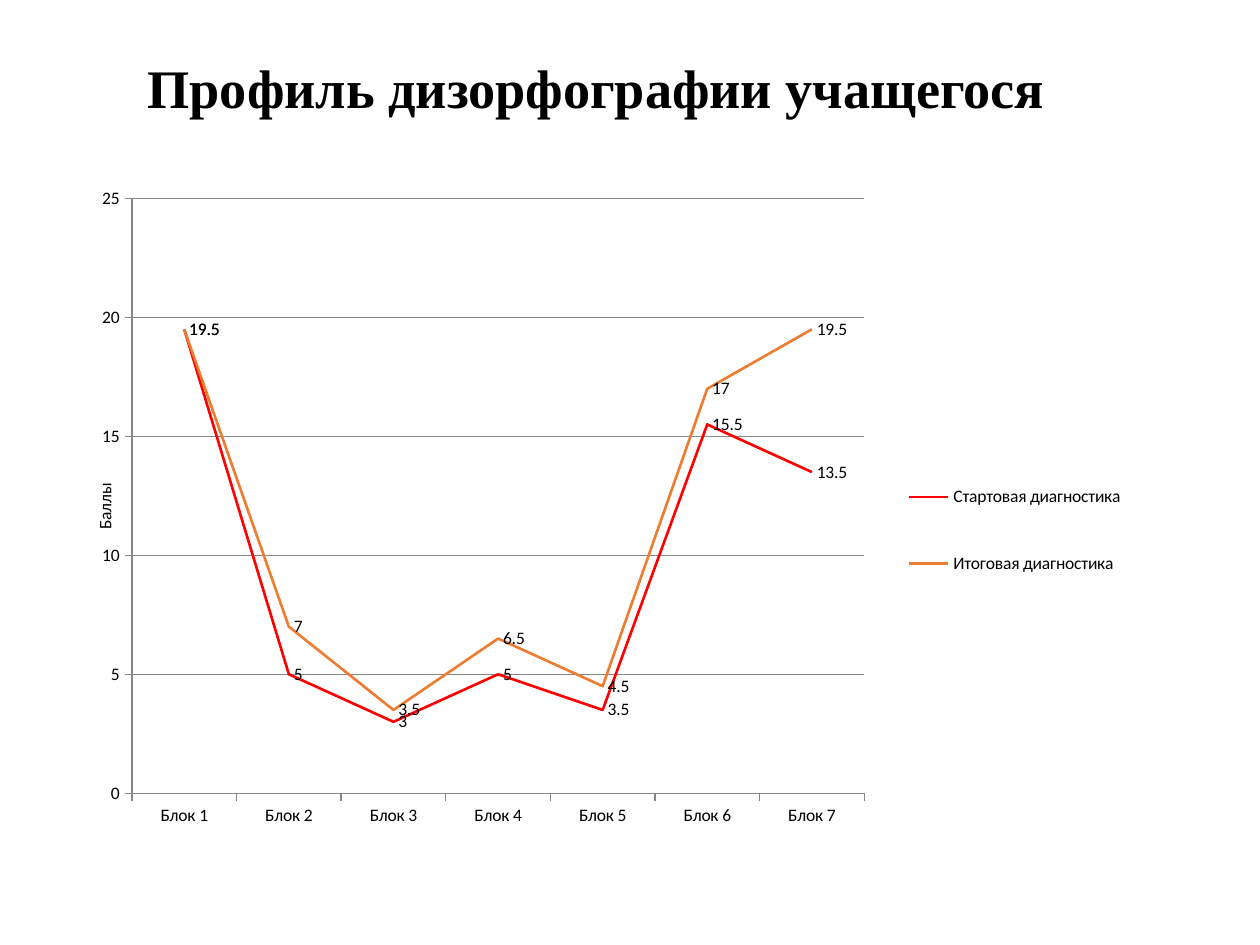
from dataclasses import dataclass

from lxml.etree import SubElement
from pptx import Presentation
from pptx.chart.data import CategoryChartData
from pptx.dml.color import RGBColor
from pptx.enum.chart import XL_CHART_TYPE as ChartType
from pptx.enum.chart import XL_LABEL_POSITION as LabelPos
from pptx.enum.chart import XL_LEGEND_POSITION as LegendPos
from pptx.enum.chart import XL_MARKER_STYLE as Marker
from pptx.enum.chart import XL_TICK_MARK as Tick
from pptx.enum.text import MSO_ANCHOR, PP_ALIGN
from pptx.oxml.ns import qn
from pptx.util import Cm, Pt

BLACK = RGBColor(0x00, 0x00, 0x00)
RED = RGBColor(0xFF, 0x00, 0x00)
ORANGE = RGBColor(0xED, 0x7D, 0x31)
GRAY = RGBColor(0x87, 0x87, 0x87)

TITLE_FONT = {"name": "Times New Roman", "size": Pt(31), "bold": True}
CHART_FONT = {"name": "Calibri", "size": Pt(10), "bold": False}


@dataclass
class Diagnostic:
    name: str
    scores: tuple[float, ...]
    color: RGBColor


@dataclass
class Layout:
    x: float
    y: float
    w: float | None = None
    h: float | None = None
    inner: bool = False


DIAGNOSTICS = [
    Diagnostic("Стартовая диагностика", (19.5, 5, 3, 5, 3.5, 15.5, 13.5), RED),
    Diagnostic("Итоговая диагностика", (19.5, 7, 3.5, 6.5, 4.5, 17, 19.5), ORANGE),
]


def format_font(font, values: dict) -> None:
    for key, value in values.items():
        setattr(font, key, value)
    font.color.rgb = BLACK


def set_layout(parent, layout: Layout, after: str | None = None) -> None:
    for old in parent.findall(qn("c:layout")):
        parent.remove(old)
    node = SubElement(parent, qn("c:layout"))
    parent.insert(parent.index(parent.find(qn(after))) + 1 if after else 0, node)
    manual = SubElement(node, qn("c:manualLayout"))
    values = {"layoutTarget": "inner"} if layout.inner else {}
    values |= {"xMode": "edge", "yMode": "edge"}
    values |= {key: getattr(layout, key) for key in "xywh"}
    for key, value in values.items():
        if value is not None:
            SubElement(manual, qn(f"c:{key}")).set("val", str(value))


def add_title(s, text: str) -> None:
    sp = s.shapes.title
    sp.left, sp.top, sp.width, sp.height = Cm(2.41), Cm(0.58), Cm(19.2), Cm(2.51)
    tf = sp.text_frame
    tf.vertical_anchor = MSO_ANCHOR.MIDDLE
    p = tf.paragraphs[0]
    p.alignment, p.line_spacing = PP_ALIGN.CENTER, 0.9
    r = p.add_run()
    r.text = text
    format_font(r.font, TITLE_FONT)


def format_axes(chart) -> None:
    for axis in (chart.category_axis, chart.value_axis):
        axis.major_tick_mark, axis.minor_tick_mark = Tick.OUTSIDE, Tick.NONE
        axis.format.line.color.rgb = GRAY
    axis = chart.value_axis
    axis.minimum_scale, axis.maximum_scale, axis.major_unit = 0, 25, 5
    axis.major_gridlines.format.line.color.rgb = GRAY
    title = axis.axis_title
    tf = title.text_frame
    tf.text = "Баллы"
    format_font(tf.paragraphs[0].runs[0].font, CHART_FONT)
    body = title._element.find(".//" + qn("a:bodyPr"))
    body.set("rot", "-5400000")
    body.set("vert", "horz")
    set_layout(title._element, Layout(0.008, 0.45), "c:tx")


def format_series(series, color: RGBColor) -> None:
    series.smooth = False
    series.marker.style = Marker.NONE
    series.format.line.color.rgb = color
    series.format.line.width = Pt(1.5)
    labels = series.data_labels
    labels.show_value = True
    labels.position = LabelPos.RIGHT
    format_font(labels.font, CHART_FONT)


def add_chart(s, diagnostics: list[Diagnostic]) -> None:
    data = CategoryChartData()
    data.categories = [f"Блок {n}" for n in range(1, 8)]
    for d in diagnostics:
        data.add_series(d.name, d.scores)
    chart = s.shapes.add_chart(
        ChartType.LINE, Cm(1.65), Cm(3.61), Cm(21.49), Cm(13.49), data
    ).chart
    format_font(chart.font, CHART_FONT)
    chart.has_title = False
    chart.has_legend = True
    chart.legend.position = LegendPos.RIGHT
    chart.legend.include_in_layout = False
    set_layout(chart.legend._element, Layout(0.76, 0.39, 0.23, 0.27), "c:legendPos")
    plot = chart.plots[0]
    plot.vary_by_categories = False
    for series, d in zip(plot.series, diagnostics):
        format_series(series, d.color)
    format_axes(chart)
    plot_area = chart._chartSpace.find(".//" + qn("c:plotArea"))
    set_layout(plot_area, Layout(0.047, 0.029, 0.687, 0.889, inner=True))


def main() -> None:
    prs = Presentation()
    prs.slide_width, prs.slide_height = Cm(25.4), Cm(19.05)
    s = prs.slides.add_slide(prs.slide_layouts[5])
    add_title(s, "Профиль дизорфографии учащегося")
    add_chart(s, DIAGNOSTICS)
    prs.save("out.pptx")


if __name__ == "__main__":
    main()
